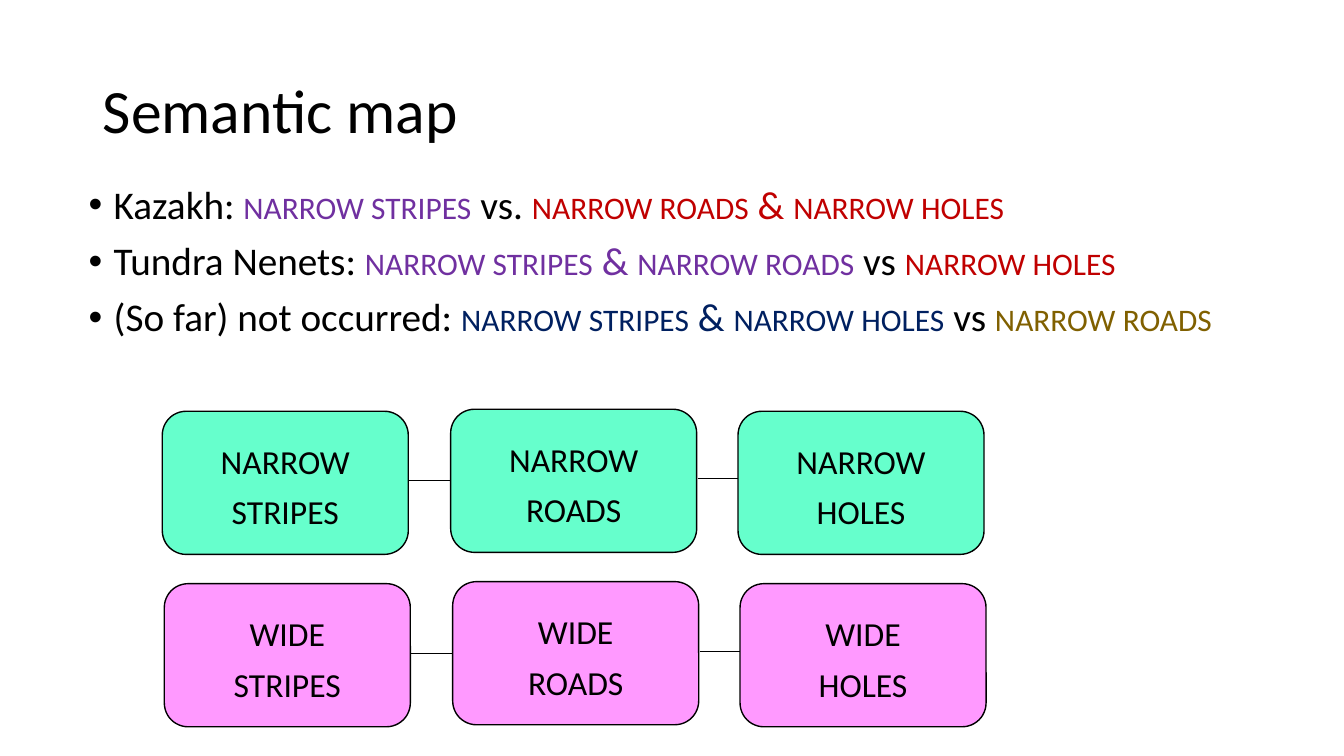
"""Build the semantic map slide for narrow and wide objects."""
from dataclasses import dataclass

from lxml.etree import SubElement
from pptx import Presentation
from pptx.dml.color import RGBColor
from pptx.enum.shapes import MSO_CONNECTOR, MSO_SHAPE
from pptx.enum.text import MSO_ANCHOR, MSO_AUTO_SIZE, PP_ALIGN
from pptx.oxml.ns import qn
from pptx.util import Inches, Pt


@dataclass(frozen=True)
class Theme:
    font: str = "Calibri"
    black: str = "000000"
    violet: str = "7030A0"
    red: str = "C00000"
    navy: str = "002060"
    olive: str = "806000"
    mint: str = "66FFCC"
    pink: str = "FF99FF"
    head: int = 44
    body: int = 28
    label: int = 30


theme = Theme()


def write(par, text, size, color=theme.black, small=False):
    run = par.add_run()
    run.text = text
    run.font.name = theme.font
    run.font.size = Pt(size)
    run.font.color.rgb = RGBColor.from_string(color)
    if small:
        run.font._element.set("cap", "small")


deck = Presentation()
deck.slide_width, deck.slide_height = Inches(13.33), Inches(7.5)
slide = deck.slides.add_slide(deck.slide_layouts[5])
shapes = slide.shapes

title = shapes.title
title.left, title.top = Inches(0.92), Inches(0.4)
title.width, title.height = Inches(11.5), Inches(1.45)
frame = title.text_frame
frame.auto_size = MSO_AUTO_SIZE.NONE
frame.vertical_anchor = MSO_ANCHOR.MIDDLE
par = frame.paragraphs[0]
par.alignment = PP_ALIGN.LEFT
par.line_spacing = 0.9
write(par, "Semantic map", theme.head)

points = [
    [("Kazakh: ", theme.black, False),
     ("narrow stripes", theme.violet, True),
     (" vs. ", theme.black, False),
     ("narrow roads", theme.red, True),
     (" & ", theme.red, False),
     ("narrow holes", theme.red, True)],
    [("Tundra Nenets: ", theme.black, False),
     ("narrow stripes", theme.violet, True),
     (" & ", theme.violet, False),
     ("narrow roads", theme.violet, True),
     (" vs ", theme.black, False),
     ("narrow holes", theme.red, True)],
    [("(So far) not occurred: ", theme.black, False),
     ("narrow stripes", theme.navy, True),
     (" & ", theme.navy, False),
     ("narrow holes", theme.navy, True),
     (" vs ", theme.black, False),
     ("narrow roads", theme.olive, True)],
]
body = shapes.add_textbox(Inches(0.78), Inches(1.79), Inches(11.5), Inches(4.76))
frame = body.text_frame
frame.word_wrap = True
for i, point in enumerate(points):
    par = frame.add_paragraph() if i else frame.paragraphs[0]
    par.line_spacing = 0.9
    par.space_before = Pt(10)
    props = par._p.get_or_add_pPr()
    props.set("marL", str(Inches(0.25)))
    props.set("indent", str(-Inches(0.25)))
    SubElement(props, qn("a:buFont"), typeface="Arial")
    SubElement(props, qn("a:buChar"), char="•")
    for text, color, small in point:
        write(par, text, theme.body, color, small)

wide, high = 2.44, 1.42
nouns = [("stripes", 0, 0.02), ("roads", 2.86, 0), ("holes", 5.71, 0.02)]
rows = [("narrow", 1.61, 4.06, theme.mint), ("wide", 1.63, 5.77, theme.pink)]
for word, left, top, fill in rows:
    for noun, shift, drop in nouns:
        x, y = left + shift, top + drop
        box = shapes.add_shape(MSO_SHAPE.ROUNDED_RECTANGLE, Inches(x), Inches(y),
                               Inches(wide), Inches(high))
        box.shadow.inherit = False
        box.fill.solid()
        box.fill.fore_color.rgb = RGBColor.from_string(fill)
        box.line.color.rgb = RGBColor.from_string(theme.black)
        box.line.width = Pt(1)
        frame = box.text_frame
        frame.word_wrap = True
        frame.vertical_anchor = MSO_ANCHOR.MIDDLE
        for i, text in enumerate((word, noun)):
            par = frame.add_paragraph() if i else frame.paragraphs[0]
            par.alignment = PP_ALIGN.CENTER
            write(par, text, theme.label, small=True)
        if noun != "holes":
            start, level = Inches(x + wide + 0.01), Inches(y + 0.69)
            link = shapes.add_connector(MSO_CONNECTOR.STRAIGHT, start, level,
                                        start + Inches(0.4), level)
            link.line.color.rgb = RGBColor.from_string(theme.black)
            link.line.width = Pt(0.5)
            SubElement(link._element.spPr, qn("a:effectLst"))

deck.save("out.pptx")
